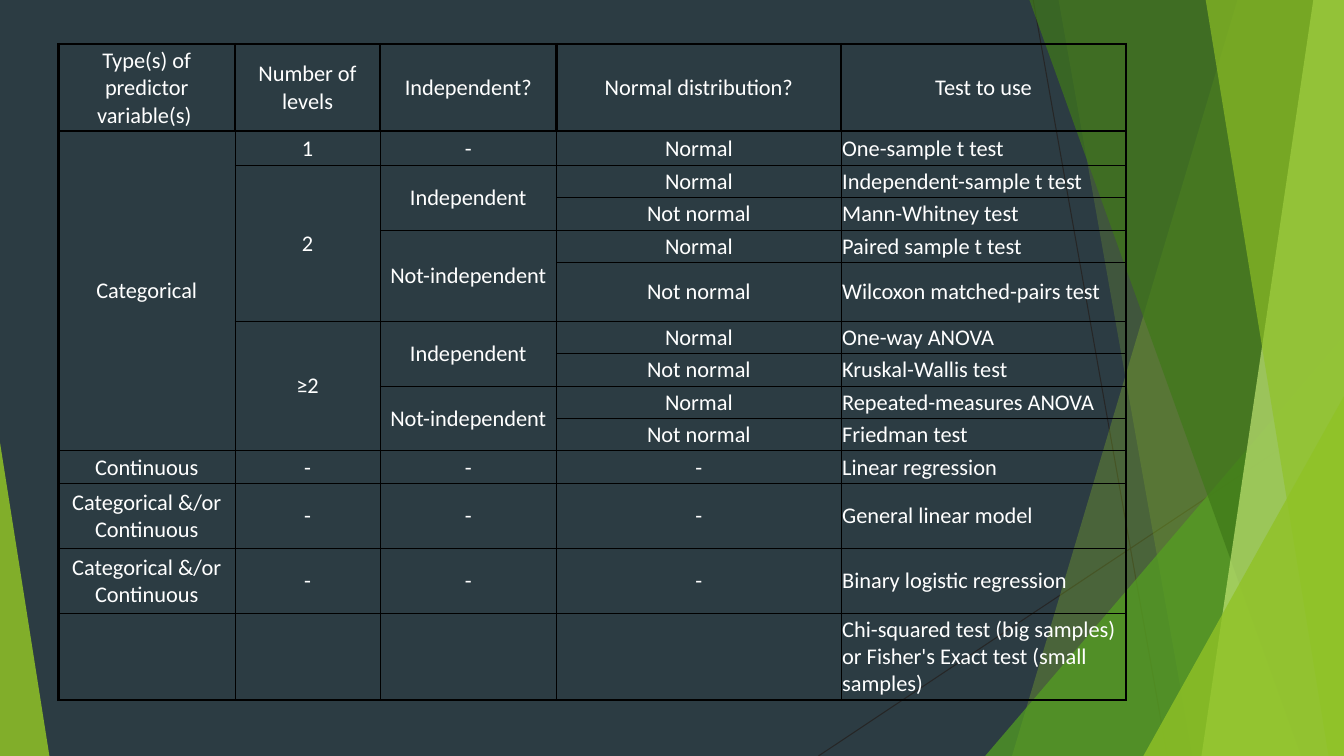
from lxml import etree
from pptx import Presentation
from pptx import util as u
from pptx.dml.color import RGBColor
from pptx.enum import shapes, text
from pptx.oxml.ns import qn

Pt = u.Pt
W, H = 960, 540
TOP = -0.7  # the facets start just above the slide edge
COLORS = {
    "back": "2C3C43", "line": "262626", "text": "FFFFFF", "border": "000000",
    "lime": "90C226", "green": "54A021", "forest": "3F7819", "pale": "C0E474",
}

COLUMNS = [126, 103.7, 126, 203.4, 203.4]
ROW = 23.2
HEIGHTS = [62, 24.4, ROW, ROW, ROW, 41.8] + [ROW] * 5 + [2 * ROW] * 2 + [62]
TESTS = [
    ["Type(s) of predictor variable(s) ", "Number of levels", "Independent?",
     "Normal distribution?", "Test to use"],
    ["Categorical", "1", "-", "Normal", "One-sample t test"],
    ["", "2", "Independent", "Normal", "Independent-sample t test"],
    ["", "", "", "Not normal", "Mann-Whitney test"],
    ["", "", "Not-independent", "Normal", "Paired sample t test"],
    ["", "", "", "Not normal", "Wilcoxon matched-pairs test"],
    ["", "≥2", "Independent", "Normal", "One-way ANOVA"],
    ["", "", "", "Not normal", "Kruskal-Wallis test"],
    ["", "", "Not-independent", "Normal", "Repeated-measures ANOVA"],
    ["", "", "", "Not normal", "Friedman test"],
    ["Continuous", "-", "-", "-", "Linear regression"],
    ["Categorical &/or Continuous", "-", "-", "-", "General linear model"],
    ["Categorical &/or Continuous", "-", "-", "-", "Binary logistic regression"],
    ["", "", "", "", "Chi-squared test (big samples) or Fisher's Exact test (small samples)"],
]
# (row, column, number of rows)
MERGES = [(1, 0, 9), (2, 1, 4), (6, 1, 4)] + [(row, 2, 2) for row in (2, 4, 6, 8)]


def rgb(name):
    return RGBColor.from_string(COLORS[name])


def paint(sp, color, opacity):
    """Flat translucent fill, no outline, no shadow."""
    sp.shadow.inherit = False
    sp.line.fill.background()
    sp.fill.solid()
    sp.fill.fore_color.rgb = rgb(color)
    clr = sp.fill._xPr.find(qn("a:solidFill"))[0]
    etree.SubElement(clr, qn("a:alpha"), val=str(opacity * 1000))


def add_line(s, x1, y1, x2, y2):
    line = s.shapes.add_connector(
        shapes.MSO_CONNECTOR.STRAIGHT, Pt(x1), Pt(y1), Pt(x2), Pt(y2))
    line.line.color.rgb = rgb("line")
    line.line.width = Pt(0.75)
    etree.SubElement(line._element.spPr, qn("a:effectLst"))


def add_facet(s, top_x, bottom_x, color, opacity):
    """Panel from a slanted left edge to the right side of the slide."""
    fb = s.shapes.build_freeform(Pt(top_x), Pt(TOP))
    corners = [(W, TOP), (W, H), (bottom_x, H)]
    fb.add_line_segments([(Pt(x), Pt(y)) for x, y in corners], close=True)
    paint(fb.convert_to_shape(), color, opacity)


def add_triangle(s, x, y, w, apex, color, opacity):
    """Triangle standing on the bottom of the slide."""
    sp = s.shapes.add_shape(
        shapes.MSO_SHAPE.ISOSCELES_TRIANGLE, Pt(x), Pt(y), Pt(w), Pt(H - y))
    sp.adjustments[0] = apex
    paint(sp, color, opacity)


def write(tf, words, size=16, font="Calibri", color="text",
          align=text.PP_ALIGN.CENTER):
    p = tf.paragraphs[0]
    p.alignment = align
    r = p.add_run()
    r.text = words
    r.font.size = Pt(size)
    r.font.name = font
    r.font.color.rgb = rgb(color)


def add_borders(cell, widths):
    tc_pr = cell._tc.get_or_add_tcPr()
    for side, width in zip("LRTB", widths):
        ln = etree.SubElement(tc_pr, qn("a:ln" + side), w=str(Pt(width)))
        fill = etree.SubElement(ln, qn("a:solidFill"))
        etree.SubElement(fill, qn("a:srgbClr"), val=COLORS["border"])


def add_test_table(s, x, y):
    rows, cols = len(HEIGHTS), len(COLUMNS)
    table = s.shapes.add_table(
        rows, cols, Pt(x), Pt(y), Pt(sum(COLUMNS)), Pt(sum(HEIGHTS))).table
    table.first_row = table.horz_banding = False
    for column, width in zip(table.columns, COLUMNS):
        column.width = Pt(width)
    for row, height in zip(table.rows, HEIGHTS):
        row.height = Pt(height)

    for i, row in enumerate(TESTS):
        for j, words in enumerate(row):
            cell = table.cell(i, j)
            cell.vertical_anchor = text.MSO_ANCHOR.MIDDLE
            cell.margin_left = cell.margin_right = cell.margin_top = Pt(0.7)
            cell.margin_bottom = 0
            # Heavy lines frame the table and every header cell
            heavy = [i == 0 or j == 0, i == 0 or j == cols - 1,
                     i <= 1, i in (0, rows - 1)]
            add_borders(cell, [2 if h else 0.5 for h in heavy])
            cell.fill.background()
            if words:
                left = i > 0 and j == cols - 1
                write(cell.text_frame, words,
                      align=text.PP_ALIGN.LEFT if left else text.PP_ALIGN.CENTER)

    for row, col, count in MERGES:
        table.cell(row, col).merge(table.cell(row + count - 1, col))


def main():
    prs = Presentation()
    prs.slide_width, prs.slide_height = Pt(W), Pt(H)
    s = prs.slides.add_slide(prs.slide_layouts[6])
    s.background.fill.solid()
    s.background.fill.fore_color.rgb = rgb("back")

    # Faceted decoration, back to front
    add_line(s, 738, 0, 833.8, H)
    add_line(s, W, 290.2, 584.6, H)
    add_facet(s, 884.2, 722.9, "lime", 30)
    add_facet(s, 756, 851.8, "lime", 20)
    add_triangle(s, 703.7, 240, 256.3, 1, "green", 72)
    add_facet(s, 735.1, 929.5, "forest", 70)
    add_facet(s, 938.2, 858.2, "pale", 70)
    add_facet(s, 861.1, 949, "lime", 65)
    add_triangle(s, 816.7, 283, 143.3, 1, "lime", 80)
    add_triangle(s, 0, 316.1, 35.3, 0, "lime", 85)

    # Choice of statistical test
    add_test_table(s, 41.8, 31.5)
    prs.save("out.pptx")


if __name__ == "__main__":
    main()
